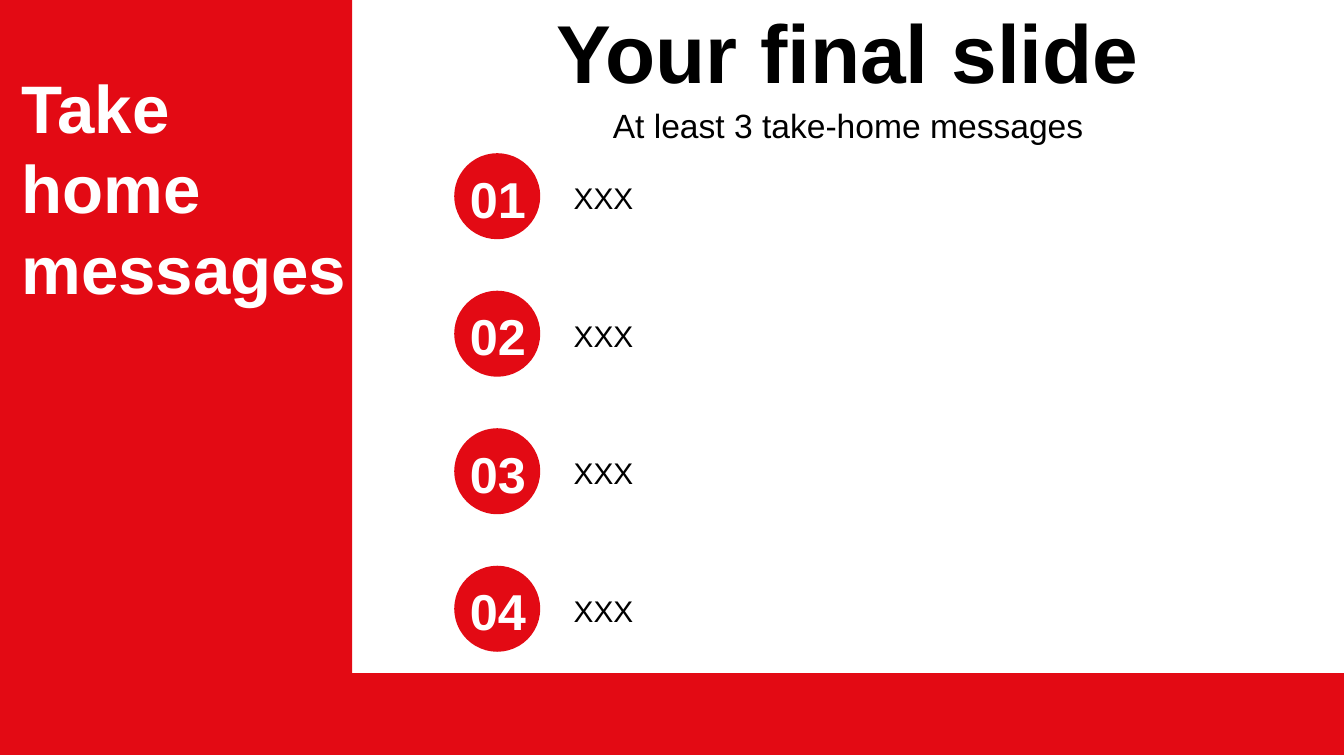
from pptx import Presentation, util as u
from pptx.dml.color import RGBColor
from pptx.enum import shapes, text

COLORS = {"red": "E30A14", "white": "FFFFFF", "black": "000000"}
WIDTH = 10
HEIGHT = WIDTH * 9 / 16         # widescreen
SIDEBAR = 2.62                  # width of the red column
CONTENT = WIDTH - SIDEBAR       # width of the white area
DISC = 0.64                     # diameter of a number disc
FIRST_ROW, LAST_ROW, ROWS = 1.14, 4.21, 4
ROW_STEP = (LAST_ROW - FIRST_ROW) / (ROWS - 1)

deck = Presentation()
deck.slide_width, deck.slide_height = u.Inches(WIDTH), u.Inches(HEIGHT)
page = deck.slides.add_slide(deck.slide_layouts[6])


def add_block(kind, left, top, width, height, outlined=False):
    block = page.shapes.add_shape(kind, *map(u.Inches, (left, top, width, height)))
    block.shadow.inherit = False
    block.fill.solid()
    block.fill.fore_color.rgb = RGBColor.from_string(COLORS["red"])
    if outlined:
        block.line.color.rgb = RGBColor.from_string(COLORS["red"])
        block.line.width = u.Pt(0.75)
    else:
        block.line.fill.background()


def add_label(words, left, top, width, height, size, color="black", bold=False,
              align=text.PP_ALIGN.LEFT, anchor=text.MSO_ANCHOR.TOP):
    box = page.shapes.add_textbox(*map(u.Inches, (left, top, width, height)))
    frame = box.text_frame
    frame.word_wrap = True
    frame.vertical_anchor = anchor
    frame.text = words
    para = frame.paragraphs[0]
    para.alignment = align
    span = para.runs[0]
    span.font.name, span.font.size, span.font.bold = "Arial", u.Pt(size), bold
    span.font.color.rgb = RGBColor.from_string(COLORS[color])
    return frame


# Red bar along the bottom and red column on the left
add_block(shapes.MSO_SHAPE.RECTANGLE, 0, 5.01, WIDTH, 0.6, outlined=True)
add_block(shapes.MSO_SHAPE.RECTANGLE, 0, 0, SIDEBAR, 5.03)

# Sidebar heading
heading = add_label("Take home messages", -0.07, 0.43, 2.83, 1.92, 36, "white", True,
                    anchor=text.MSO_ANCHOR.MIDDLE)
heading.margin_left = u.Inches(0.23)

# Numbered messages
for row, message in enumerate(["XXX"] * ROWS):
    top = FIRST_ROW + row * ROW_STEP
    add_block(shapes.MSO_SHAPE.OVAL, 3.38, top, DISC, DISC)
    add_label(f"{row + 1:02d}", 3.31, top + 0.06, 0.79, 0.56, 27, "white", True,
              text.PP_ALIGN.CENTER)
    add_label(message, 4.17, top + 0.15, 4.18, 0.37, 16)

# Title and subtitle, centred over the white area
add_label("Your final slide", SIDEBAR, -0.04, CONTENT, 0.86, 44, bold=True,
          align=text.PP_ALIGN.CENTER)
add_label("At least 3 take-home messages", SIDEBAR, 0.46, CONTENT, 0.94, 18,
          align=text.PP_ALIGN.CENTER, anchor=text.MSO_ANCHOR.MIDDLE)

deck.save("out.pptx")
